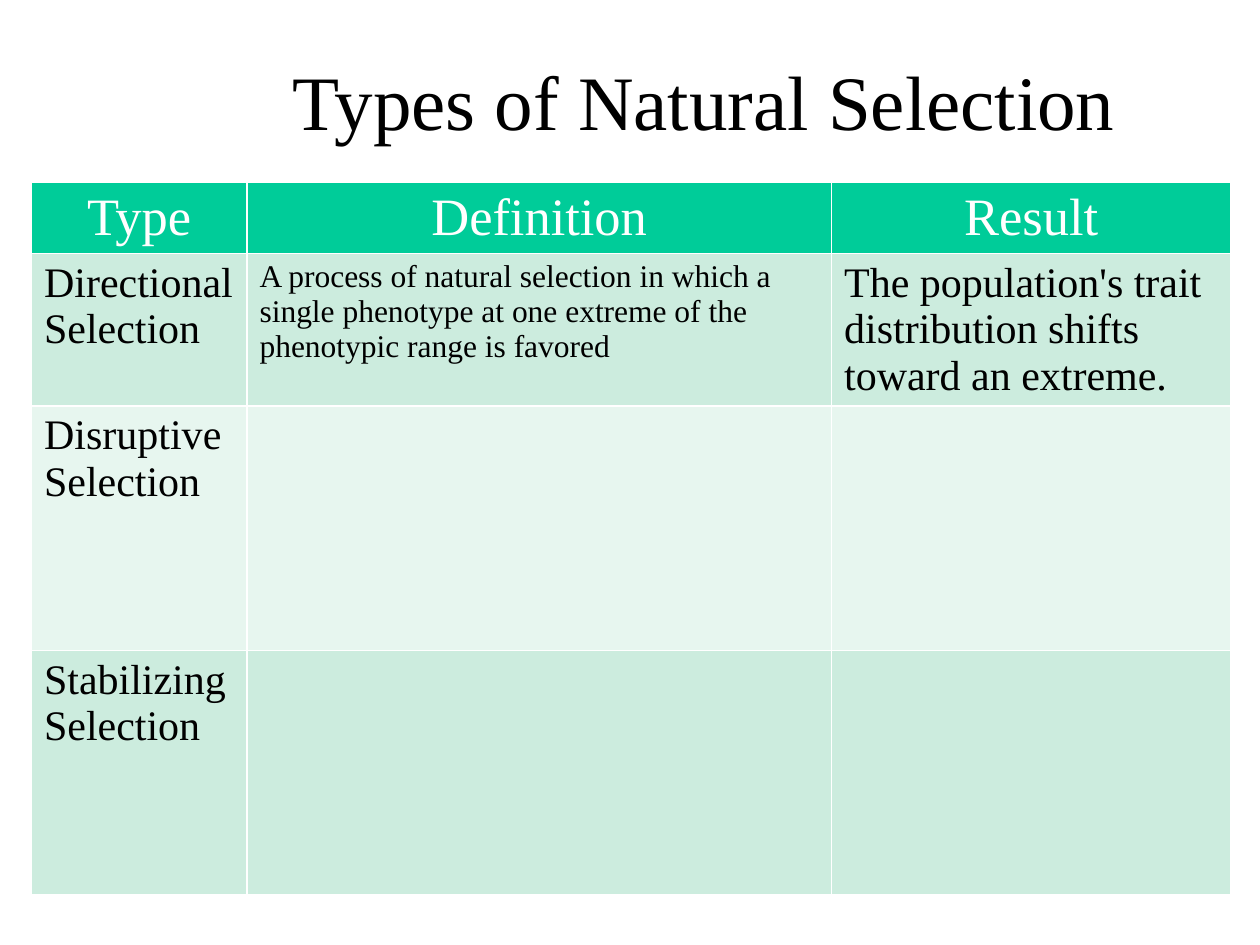
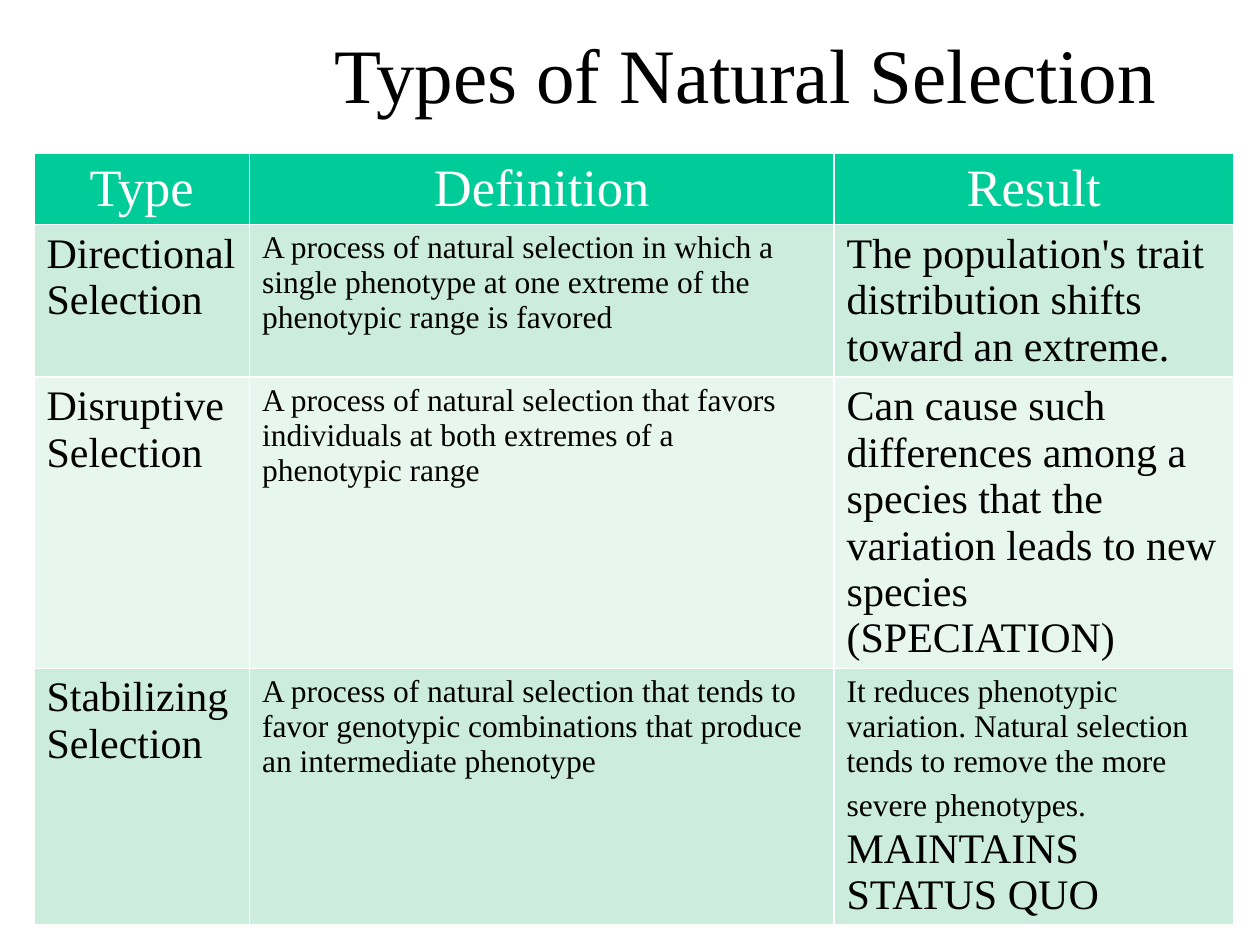
from pptx import Presentation
from pptx.dml.color import RGBColor
from pptx.enum.text import MSO_ANCHOR, PP_ALIGN
from pptx.util import Inches, Pt

FONT = "Times New Roman"
BLACK = RGBColor(0x00, 0x00, 0x00)
WHITE = RGBColor(0xFF, 0xFF, 0xFF)
GREEN = RGBColor(0x00, 0xCC, 0x99)
BANDS = [RGBColor(0xE7, 0xF6, 0xEF), RGBColor(0xCC, 0xEC, 0xDE)]

TITLE_FORMAT = {"size": Pt(44), "color": BLACK}
HEADER_FORMAT = {"size": Pt(30), "color": WHITE}
LARGE = {"size": Pt(24), "color": BLACK}
SMALL = {"size": Pt(18), "color": BLACK}

TITLE = "Types of Natural Selection"
TITLE_SIZE = (9, 1.25)
COLUMN_WIDTHS = [1.71, 4.64, 3.17]

# A cell is a list of paragraphs, and a paragraph is a list of (text, format) runs.
HEADER = [[[(name, HEADER_FORMAT)]] for name in ("Type", "Definition", "Result")]
DIRECTIONAL = [
    [[("Directional Selection", LARGE)]],
    [[("A process of natural selection in which a single phenotype at one "
       "extreme of the phenotypic range is favored", SMALL)]],
    [[("The population's trait distribution shifts toward an extreme.", LARGE)]],
]
DISRUPTIVE = [
    [[("Disruptive Selection", LARGE)]],
    [[("A process of natural selection that favors individuals at both "
       "extremes of a phenotypic range", SMALL)]],
    [[("Can cause such differences among a species that the variation leads "
       "to new species (SPECIATION)", LARGE)]],
]
STABILIZING = [
    [[("Stabilizing Selection", LARGE)]],
    [[("A process of natural selection that tends to favor genotypic "
       "combinations that produce an intermediate phenotype", SMALL)]],
    [[("It reduces phenotypic variation. Natural selection tends to remove "
       "the more severe phenotypes.", SMALL), (" ", LARGE)],
     [("MAINTAINS STATUS QUO", LARGE)]],
]

SLIDES = [
    {
        "title_at": (1.09, 0.17),
        "table_at": (0.25, 1.45),
        "row_heights": [0.55, 1.21, 1.94, 1.94],
        "rows": [HEADER, DIRECTIONAL, DISRUPTIVE[:1], STABILIZING[:1]],
    },
    {
        "title_at": (1.42, -0.05),
        "table_at": (0.27, 1.22),
        "row_heights": [0.55, 1.21, 2.31, 2.03],
        "rows": [HEADER, DIRECTIONAL, DISRUPTIVE, STABILIZING],
    },
]


def add_run(paragraph, text, text_format):
    run = paragraph.add_run()
    run.text = text
    run.font.name = FONT
    run.font.bold = False
    run.font.size = text_format["size"]
    run.font.color.rgb = text_format["color"]


presentation = Presentation()
presentation.slide_width, presentation.slide_height = Inches(10), Inches(7.5)
title_only = presentation.slide_layouts[5]

for content in SLIDES:
    slide = presentation.slides.add_slide(title_only)

    title = slide.shapes.title
    title.left, title.top = map(Inches, content["title_at"])
    title.width, title.height = map(Inches, TITLE_SIZE)
    title.text_frame.vertical_anchor = MSO_ANCHOR.MIDDLE
    paragraph = title.text_frame.paragraphs[0]
    paragraph.alignment = PP_ALIGN.CENTER
    add_run(paragraph, TITLE, TITLE_FORMAT)

    left, top = content["table_at"]
    heights = content["row_heights"]
    table = slide.shapes.add_table(
        len(heights), len(COLUMN_WIDTHS), Inches(left), Inches(top),
        Inches(sum(COLUMN_WIDTHS)), Inches(sum(heights))).table
    for column, width in zip(table.columns, COLUMN_WIDTHS):
        column.width = Inches(width)

    for row_index, (row, height) in enumerate(zip(table.rows, heights)):
        row.height = Inches(height)
        is_header = row_index == 0
        for cell in row.cells:
            cell.fill.solid()
            cell.fill.fore_color.rgb = GREEN if is_header else BANDS[row_index % 2]
        for cell, paragraphs in zip(row.cells, content["rows"][row_index]):
            frame = cell.text_frame
            for index, runs in enumerate(paragraphs):
                paragraph = frame.add_paragraph() if index else frame.paragraphs[0]
                paragraph.alignment = PP_ALIGN.CENTER if is_header else PP_ALIGN.LEFT
                for text, text_format in runs:
                    add_run(paragraph, text, text_format)

presentation.save("out.pptx")
